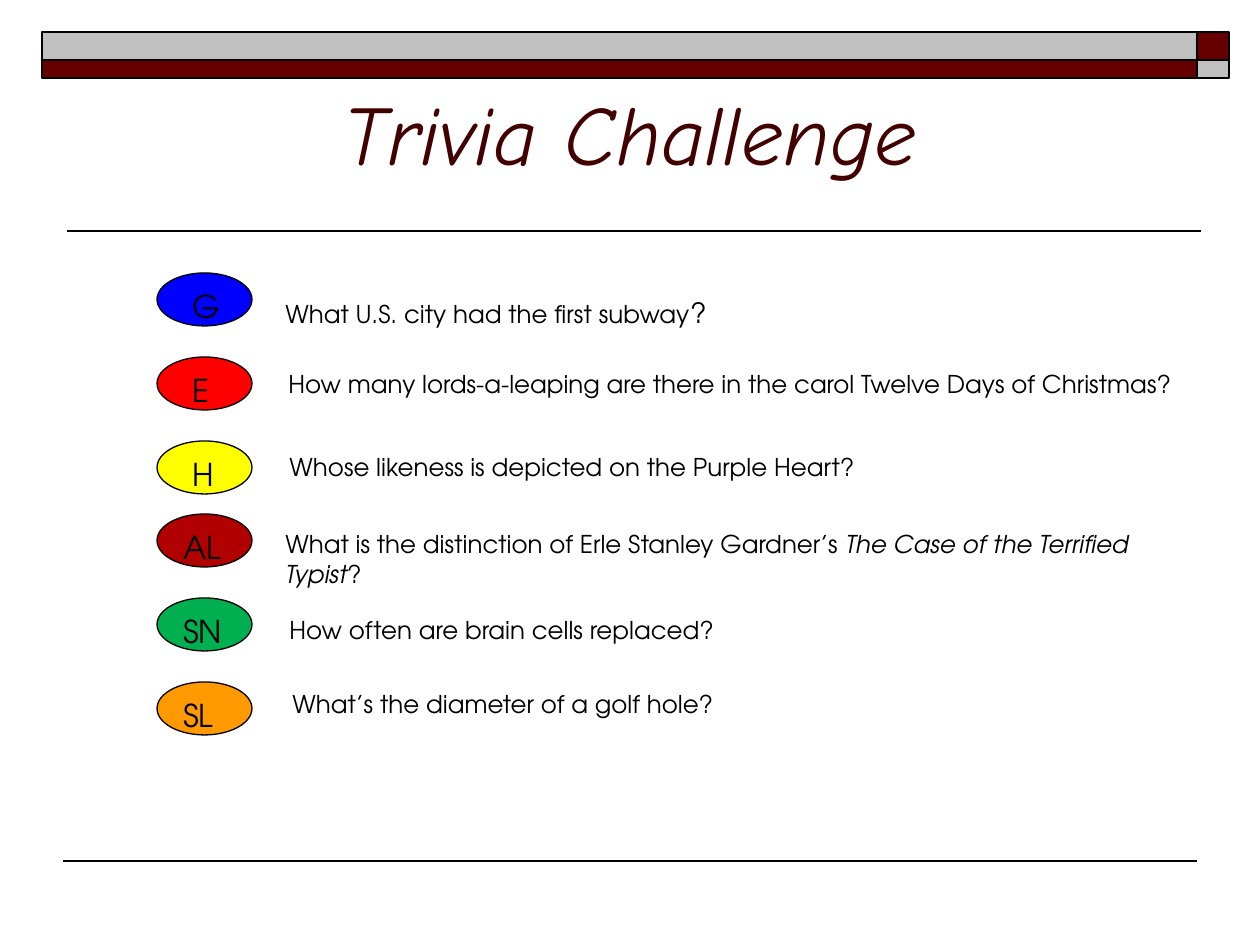
from dataclasses import dataclass

from lxml import etree
from pptx import Presentation
from pptx.dml.color import RGBColor
from pptx.enum.shapes import MSO_CONNECTOR, MSO_SHAPE
from pptx.enum.text import MSO_ANCHOR, MSO_AUTO_SIZE, PP_ALIGN
from pptx.oxml.ns import qn
from pptx.shapes.autoshape import Shape
from pptx.shapes.shapetree import SlideShapes
from pptx.util import Emu, Pt

RECTANGLE, OVAL = MSO_SHAPE.RECTANGLE, MSO_SHAPE.OVAL
STRAIGHT = MSO_CONNECTOR.STRAIGHT
TOP, BOTTOM = MSO_ANCHOR.TOP, MSO_ANCHOR.BOTTOM
LEFT, CENTER = PP_ALIGN.LEFT, PP_ALIGN.CENTER
GROW = MSO_AUTO_SIZE.SHAPE_TO_FIT_TEXT

EMU_PER_PX = 914400 / 126
TITLE_FONT = "Comic Neue"
BODY_FONT = "TeX Gyre Adventor"

BLACK = RGBColor(0x00, 0x00, 0x00)
MAROON = RGBColor(0x66, 0x00, 0x00)
DARK_MAROON = RGBColor(0x42, 0x00, 0x00)
SILVER = RGBColor(0xC0, 0xC0, 0xC0)
BLUE = RGBColor(0x00, 0x00, 0xFF)
RED = RGBColor(0xFF, 0x00, 0x00)
YELLOW = RGBColor(0xFF, 0xFF, 0x00)
CRIMSON = RGBColor(0xB1, 0x00, 0x00)
GREEN = RGBColor(0x00, 0xB0, 0x50)
ORANGE = RGBColor(0xFF, 0x99, 0x00)


@dataclass(frozen=True)
class Box:
    left: int
    top: int
    width: int
    height: int


@dataclass(frozen=True)
class Part:
    text: str
    size: int = 14
    italic: bool = False


@dataclass(frozen=True)
class Trivia:
    category: str
    color: RGBColor
    badge_top: int
    question_box: Box
    question: tuple[Part, ...]


QUESTIONS = (
    Trivia("G", BLUE, 273, Box(273, 289, 777, 47),
           (Part("What U.S. city had the first subway"), Part("?", 16))),
    Trivia("E", RED, 357, Box(276, 363, 910, 72),
           (Part("How many lords-a-leaping are there in the carol "
                 "Twelve Days of Christmas?"),)),
    Trivia("H", YELLOW, 441, Box(277, 446, 762, 43),
           (Part("Whose likeness is depicted on the Purple Heart?"),)),
    Trivia("AL", CRIMSON, 514, Box(273, 523, 892, 72),
           (Part("What is the distinction of Erle Stanley Gardner’s "),
            Part("The Case of the Terrified Typist", italic=True), Part("?"))),
    Trivia("SN", GREEN, 598, Box(277, 609, 819, 43),
           (Part("How often are brain cells replaced?"),)),
    Trivia("SL", ORANGE, 682, Box(280, 683, 903, 43),
           (Part("What’s the diameter of a golf hole?"),)),
)


def px(length: int) -> Emu:
    return Emu(round(length * EMU_PER_PX))


def place(box: Box) -> tuple[Emu, Emu, Emu, Emu]:
    return px(box.left), px(box.top), px(box.width), px(box.height)


def write(shape: Shape, parts: tuple[Part, ...], font: str, color: RGBColor,
          align: PP_ALIGN = LEFT, anchor: MSO_ANCHOR = TOP) -> None:
    frame = shape.text_frame
    frame.word_wrap = True
    frame.vertical_anchor = anchor
    paragraph = frame.paragraphs[0]
    paragraph.alignment = align
    for part in parts:
        run = paragraph.add_run()
        run.text = part.text
        run.font.name = font
        run.font.size = Pt(part.size)
        run.font.italic = part.italic
        run.font.color.rgb = color


def draw_shape(shapes: SlideShapes, kind: MSO_SHAPE, box: Box,
               fill: RGBColor, line_width: float) -> Shape:
    shape = shapes.add_shape(kind, *place(box))
    shape.shadow.inherit = False
    shape.fill.solid()
    shape.fill.fore_color.rgb = fill
    shape.line.color.rgb = BLACK
    shape.line.width = Pt(line_width)
    return shape


def draw_rule(shapes: SlideShapes, left: int, right: int, y: int,
              line_width: float) -> None:
    rule = shapes.add_connector(STRAIGHT, px(left), px(y), px(right), px(y))
    rule.line.color.rgb = BLACK
    rule.line.width = Pt(line_width)
    etree.SubElement(rule._element.spPr, qn("a:effectLst"))


def draw_banner(shapes: SlideShapes) -> None:
    columns = ((42, 1155), (1197, 32))
    rows = ((32, 28), (60, 18))
    for row, (top, height) in enumerate(rows):
        for column, (left, width) in enumerate(columns):
            color = SILVER if row == column else MAROON
            draw_shape(shapes, RECTANGLE, Box(left, top, width, height), color, 1)


def draw_trivia(shapes: SlideShapes, trivia: Trivia) -> None:
    badge = draw_shape(shapes, OVAL, Box(157, trivia.badge_top, 95, 53),
                       trivia.color, 0.75)
    write(badge, (Part(trivia.category, 18),), BODY_FONT, BLACK)
    if len(trivia.category) == 1:
        properties = badge.text_frame.paragraphs[0]._p.get_or_add_pPr()
        properties.set("marL", str(px(9)))
    question = shapes.add_textbox(*place(trivia.question_box))
    write(question, trivia.question, BODY_FONT, BLACK)
    question.text_frame.auto_size = GROW


def main() -> None:
    presentation = Presentation()
    presentation.slide_width = px(1260)
    presentation.slide_height = px(945)
    shapes = presentation.slides.add_slide(presentation.slide_layouts[6]).shapes

    draw_rule(shapes, 67, 1201, 231, 1)
    draw_banner(shapes)
    draw_rule(shapes, 63, 1197, 861, 0.75)

    title = shapes.add_textbox(*place(Box(63, 32, 1134, 157)))
    write(title, (Part("Trivia Challenge", 48, True),), TITLE_FONT, DARK_MAROON,
          CENTER, BOTTOM)

    for trivia in QUESTIONS:
        draw_trivia(shapes, trivia)

    presentation.save("out.pptx")


if __name__ == "__main__":
    main()
